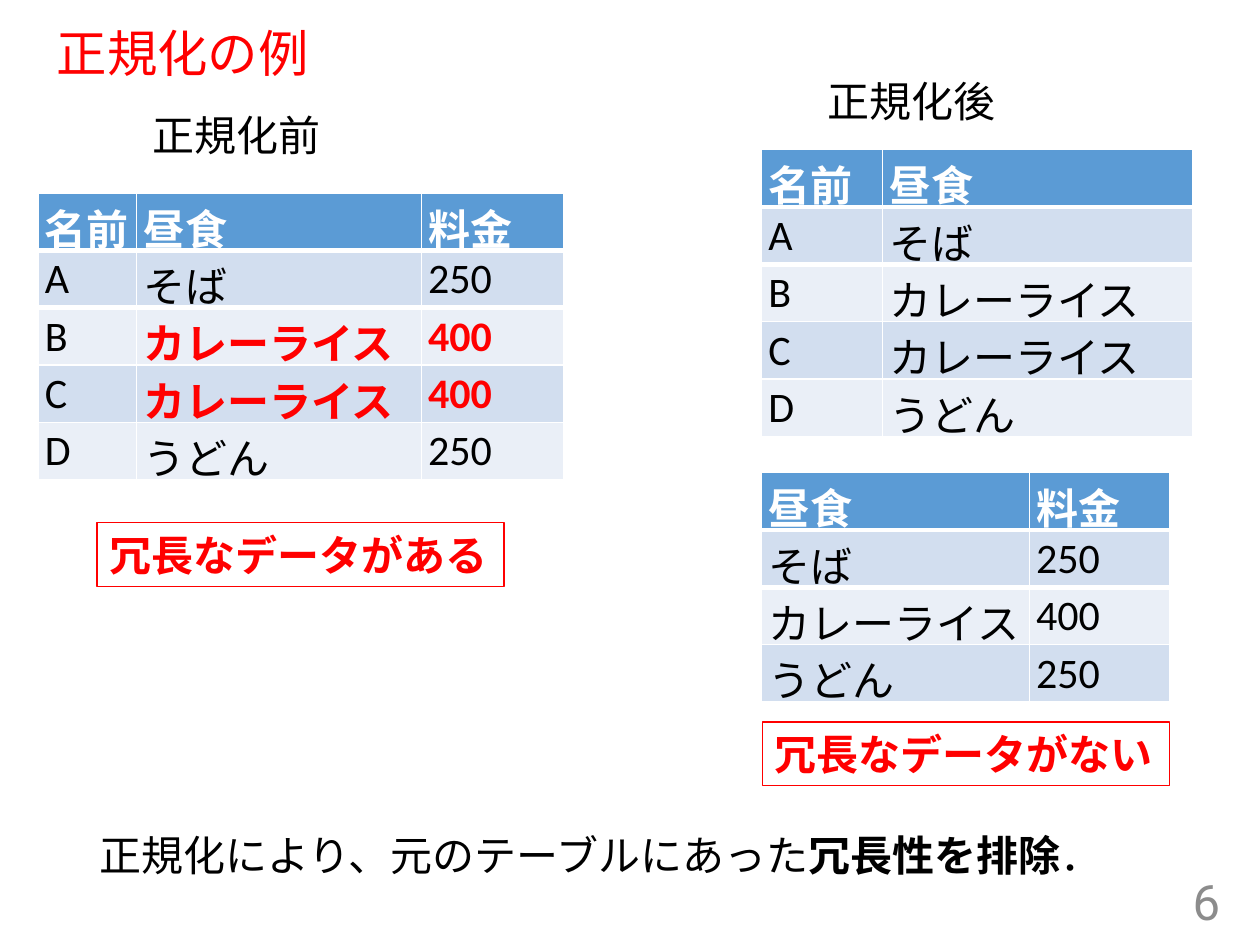
from lxml import etree
from pptx import Presentation
from pptx.dml.color import RGBColor
from pptx.enum.shapes import MSO_SHAPE
from pptx.enum.text import MSO_ANCHOR, MSO_AUTO_SIZE, PP_ALIGN
from pptx.oxml.ns import qn
from pptx.util import Pt

LEFT, RIGHT = PP_ALIGN.LEFT, PP_ALIGN.RIGHT
TOP, MIDDLE = MSO_ANCHOR.TOP, MSO_ANCHOR.MIDDLE
NO_FIT, GROW = MSO_AUTO_SIZE.NONE, MSO_AUTO_SIZE.SHAPE_TO_FIT_TEXT
RECTANGLE = MSO_SHAPE.RECTANGLE

THEME = {
    "red": RGBColor(0xFF, 0x00, 0x00),
    "black": RGBColor(0x00, 0x00, 0x00),
    "white": RGBColor(0xFF, 0xFF, 0xFF),
    "gray": RGBColor(0x8C, 0x8C, 0x8C),
    "header": RGBColor(0x5B, 0x9B, 0xD5),
    "bands": (RGBColor(0xEA, 0xEF, 0xF7), RGBColor(0xD2, 0xDE, 0xEF)),
    "title_size": Pt(28.8),
    "number_size": Pt(28),
    "body_size": Pt(24),
}


def add_run(paragraph, text, color="black", bold=False, size="body_size", name="Calibri"):
    run = paragraph.add_run()
    run.text = text
    run.font.color.rgb = THEME[color]
    for key, value in {"name": name, "size": THEME[size], "bold": bold}.items():
        setattr(run.font, key, value)


def format_frame(shape, **formats):
    for key, value in formats.items():
        setattr(shape.text_frame, key, value)
    return shape.text_frame.paragraphs[0]


presentation = Presentation()
presentation.slide_width, presentation.slide_height = Pt(720), Pt(540)
slide = presentation.slides.add_slide(presentation.slide_layouts[5])

# Title
title = slide.shapes.title
title_box = {"left": 25.2, "top": 13.7, "width": 666, "height": 36.7}
for key, value in title_box.items():
    setattr(title, key, Pt(value))
paragraph = format_frame(title, vertical_anchor=MIDDLE, auto_size=NO_FIT)
paragraph.alignment, paragraph.line_spacing = LEFT, 0.9
add_run(paragraph, "正規化の例", "red", size="title_size", name="Arial")

# Slide number
number = slide.shapes.add_textbox(Pt(542.2), Pt(500.4), Pt(162), Pt(28.8))
paragraph = format_frame(number, word_wrap=True, vertical_anchor=MIDDLE)
paragraph.alignment = RIGHT
add_run(paragraph, "6", "gray", size="number_size", name="Roboto")

# Table captions and conclusion
TEXT_HEIGHT = Pt(36.35)
labels = [
    (79.9, 59, 111.6, [("正規化前", False)]),
    (465.8, 39.6, 111.6, [("正規化後", False)]),
    (49.7, 470.2, 596.2, [("正規化により、元のテーブルにあった", False),
                          ("冗長性を排除", True), ("．", False)]),
]
for left, top, width, runs in labels:
    label = slide.shapes.add_textbox(Pt(left), Pt(top), Pt(width), TEXT_HEIGHT)
    paragraph = format_frame(label, word_wrap=False, auto_size=GROW)
    for text, bold in runs:
        add_run(paragraph, text, bold=bold)

# Tables before and after normalization; redundant values stand out
ROW_HEIGHT, DRAWN_ROW_HEIGHT = 20.2, 32.85
CELL_FORMAT = {"margin_left": Pt(3.9), "margin_right": Pt(3.9),
               "margin_top": Pt(2), "margin_bottom": Pt(2)}
HEADER_RULE = {0: "a:lnB", 1: "a:lnT"}  # both sides of the line under the header
lunches = [("A", "そば"), ("B", "カレーライス"), ("C", "カレーライス"), ("D", "うどん")]
prices = {"そば": "250", "カレーライス": "400", "うどん": "250"}
before_rows = [(name, lunch, prices[lunch]) for name, lunch in lunches]
tables = [
    (21.8, 110.2, (56.2, 162.8, 81.2), [("名前", "昼食", "料金")] + before_rows,
     ("カレーライス", "400")),
    (435.2, 85.4, (69, 177.2), [("名前", "昼食")] + lunches, ()),
    (435.2, 270, (153, 80.4), [("昼食", "料金")] + list(prices.items()), ()),
]
for left, top, widths, rows, redundant in tables:
    frame = slide.shapes.add_table(len(rows), len(widths), Pt(left), Pt(top),
                                   Pt(sum(widths)), Pt(ROW_HEIGHT * len(rows)))
    table = frame.table
    for column, width in zip(table.columns, widths):
        column.width = Pt(width)
    for row_index, values in enumerate(rows):
        table.rows[row_index].height = Pt(ROW_HEIGHT)
        for column_index, text in enumerate(values):
            cell = table.cell(row_index, column_index)
            for key, value in CELL_FORMAT.items():
                setattr(cell, key, value)
            is_header, is_redundant = row_index == 0, text in redundant
            cell.fill.solid()
            cell.fill.fore_color.rgb = (
                THEME["header"] if is_header else THEME["bands"][row_index % 2])
            if row_index in HEADER_RULE:
                rule = etree.Element(qn(HEADER_RULE[row_index]), w=str(Pt(3)))
                fill = etree.SubElement(rule, qn("a:solidFill"))
                etree.SubElement(fill, qn("a:srgbClr"), val=str(THEME["white"]))
                cell._tc.get_or_add_tcPr().insert(0, rule)
            color = "white" if is_header else "red" if is_redundant else "black"
            add_run(cell.text_frame.paragraphs[0], text, color,
                    bold=is_header or is_redundant)
    frame.height = Pt(DRAWN_ROW_HEIGHT * len(rows))

# Boxed remarks under the tables
for left, top, text in [(55.4, 298.8, "冗長なデータがある"),
                        (435.6, 412.6, "冗長なデータがない")]:
    remark = slide.shapes.add_shape(RECTANGLE, Pt(left), Pt(top), Pt(232.6), TEXT_HEIGHT)
    remark.shadow.inherit = False
    remark.fill.background()
    remark.line.color.rgb, remark.line.width = THEME["red"], Pt(0.75)
    paragraph = format_frame(remark, word_wrap=False, auto_size=GROW, vertical_anchor=TOP)
    paragraph.alignment = LEFT
    add_run(paragraph, text, "red", bold=True)

presentation.save("out.pptx")
